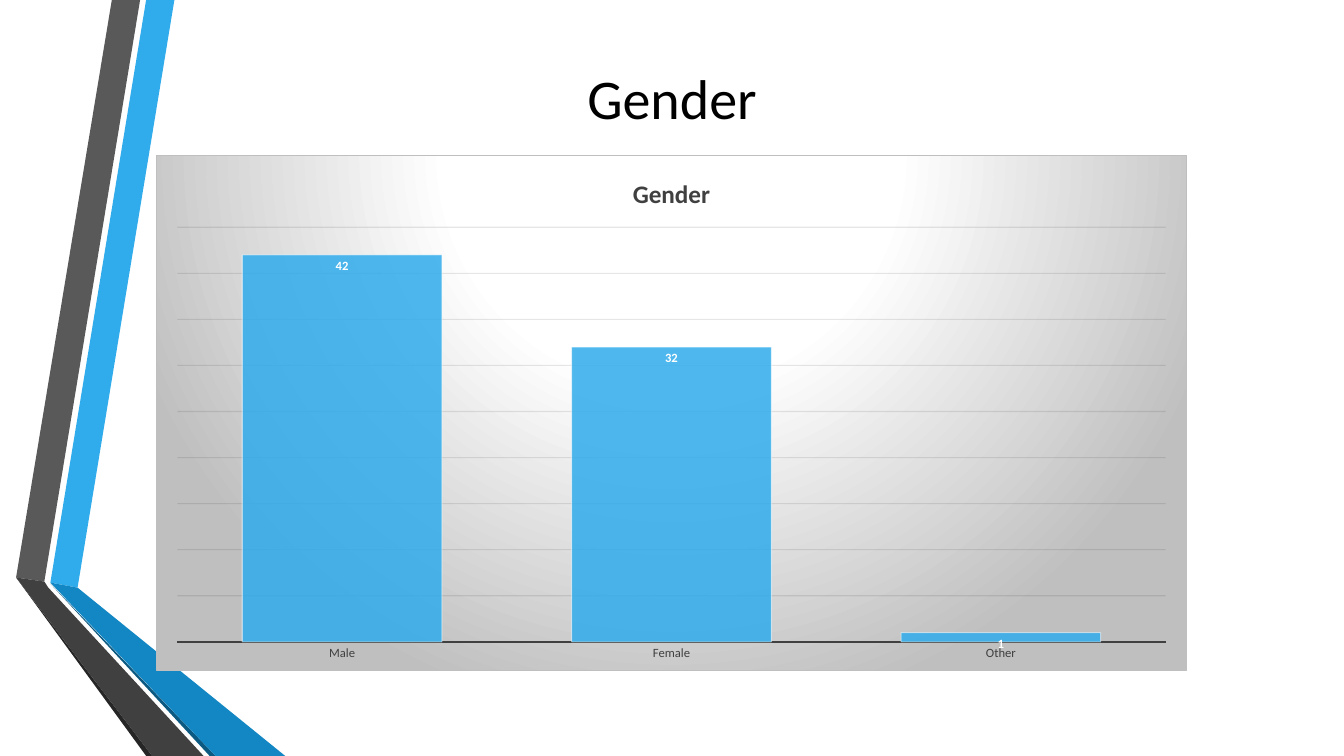
from lxml.etree import SubElement
from pptx import Presentation
from pptx.chart.data import CategoryChartData
from pptx.dml.color import RGBColor
from pptx.enum.chart import XL_CHART_TYPE, XL_LABEL_POSITION, XL_TICK_MARK
from pptx.enum.text import MSO_ANCHOR, PP_ALIGN
from pptx.oxml import parse_xml
from pptx.oxml.ns import nsdecls, qn
from pptx.util import Pt

PX = 9144
FONT = "Calibri"
RIBBONS = [
    ("30ACEC", [(50, 578), (77, 583), (173, 0), (145, 0)]),
    ("595959", [(139, 0), (111, 0), (16, 573), (44, 577)]),
    ("262626", [(16, 573), (145, 750), (151, 750)]),
    ("0C5A82", [(50, 579), (208, 750), (214, 750)]),
    ("1287C3", [(50, 578), (214, 750), (283, 750), (77, 583)]),
    ("404040", [(202, 750), (48, 583), (44, 577), (16, 573), (151, 750)]),
]
GENDERS = {"Male": 42, "Female": 32, "Other": 1}
GRADIENT_STOPS = [(0, "FFFFFF"), (39, "FFFFFF"), (100, "BFBFBF")]


def color(value):
    """Turn a hex string into a colour."""
    return RGBColor.from_string(value)


def set_font(font, size, value, bold=False):
    """Format a font."""
    formats = {"name": FONT, "size": Pt(size), "bold": bold}
    for name, setting in formats.items():
        setattr(font, name, setting)
    font.color.rgb = color(value)


def set_line(line, value, width):
    """Give a line its colour and width."""
    line.color.rgb = color(value)
    line.width = Pt(width)


def set_opacity(chart, query, percent):
    """Make the colours found by a query partly transparent."""
    for element in chart.element.xpath(query):
        SubElement(element, qn("a:alpha"), val=str(percent * 1000))


def add_ribbon(slide, fill, points):
    """Draw one flat ribbon piece."""
    builder = slide.shapes.build_freeform(*points[0], scale=PX)
    builder.add_line_segments(points[1:], close=True)
    shape = builder.convert_to_shape()
    shape.shadow.inherit = False
    shape.fill.solid()
    shape.fill.fore_color.rgb = color(fill)
    shape.line.fill.background()


def add_title(slide, text, box):
    """Place and format the slide title."""
    title = slide.shapes.title
    for name, length in zip(("left", "top", "width", "height"), box):
        setattr(title, name, length * PX)
    frame = title.text_frame
    frame.text = text
    frame.vertical_anchor = MSO_ANCHOR.MIDDLE
    paragraph = frame.paragraphs[0]
    paragraph.alignment = PP_ALIGN.CENTER
    set_font(paragraph.runs[0].font, 40, "000000")


def set_chart_background(chart):
    """Fill the chart area with a radial gradient and a thin border."""
    stops = "".join(
        f'<a:gs pos="{position * 1000}"><a:srgbClr val="{value}"/></a:gs>'
        for position, value in GRADIENT_STOPS
    )
    background = parse_xml(
        f'<c:spPr {nsdecls("c", "a")}><a:gradFill><a:gsLst>{stops}</a:gsLst>'
        '<a:path path="circle"><a:fillToRect l="50000" t="-80000" r="50000" b="180000"/>'
        '</a:path></a:gradFill><a:ln w="9525"><a:solidFill><a:srgbClr val="BFBFBF"/>'
        "</a:solidFill></a:ln></c:spPr>"
    )
    chart.element.find(qn("c:chart")).addnext(background)


def format_axes(chart):
    """Show the category axis and the faint gridlines only."""
    category_axis, value_axis = chart.category_axis, chart.value_axis
    category_axis.major_tick_mark = XL_TICK_MARK.NONE
    set_font(category_axis.tick_labels.font, 9, "404040")
    set_line(category_axis.format.line, "404040", 1.5)
    value_axis.visible = False
    value_axis.has_major_gridlines = True
    set_line(value_axis.major_gridlines.format.line, "0D0D0D", 0.75)
    set_opacity(chart, ".//c:majorGridlines//a:srgbClr", 10)


def format_columns(chart):
    """Format the columns and their value labels."""
    plot = chart.plots[0]
    plot.gap_width = 65
    plot.vary_by_categories = False
    series = plot.series[0]
    series.format.fill.solid()
    series.format.fill.fore_color.rgb = color("30ACEC")
    set_line(series.format.line, "FFFFFF", 0.75)
    set_opacity(chart, ".//c:ser/c:spPr/a:solidFill/a:srgbClr", 85)
    set_opacity(chart, ".//c:ser/c:spPr/a:ln//a:srgbClr", 50)
    labels = series.data_labels
    labels.show_value = True
    labels.position = XL_LABEL_POSITION.INSIDE_END
    set_font(labels.font, 9, "FFFFFF", bold=True)


def add_column_chart(slide, title, values, box):
    """Add a titled column chart."""
    data = CategoryChartData()
    data.categories = values.keys()
    data.add_series("Series 1", values.values())
    frame = slide.shapes.add_chart(
        XL_CHART_TYPE.COLUMN_CLUSTERED, *(length * PX for length in box), data
    )
    chart = frame.chart
    set_font(chart.font, 10, "000000")
    chart.has_legend = False
    chart.has_title = True
    chart.chart_title.include_in_layout = False
    chart.chart_title.text_frame.text = title
    run = chart.chart_title.text_frame.paragraphs[0].runs[0]
    set_font(run.font, 18, "404040", bold=True)
    set_chart_background(chart)
    format_axes(chart)
    format_columns(chart)


def main():
    """Build the slide and save it."""
    presentation = Presentation()
    presentation.slide_width = 1333 * PX
    presentation.slide_height = 750 * PX
    slide = presentation.slides.add_slide(presentation.slide_layouts[5])
    for fill, points in RIBBONS:
        add_ribbon(slide, fill, points)
    add_title(slide, "Gender", (92, 37, 1149, 118))
    add_column_chart(slide, "Gender", GENDERS, (155, 154, 1022, 512))
    presentation.save("out.pptx")


if __name__ == "__main__":
    main()
